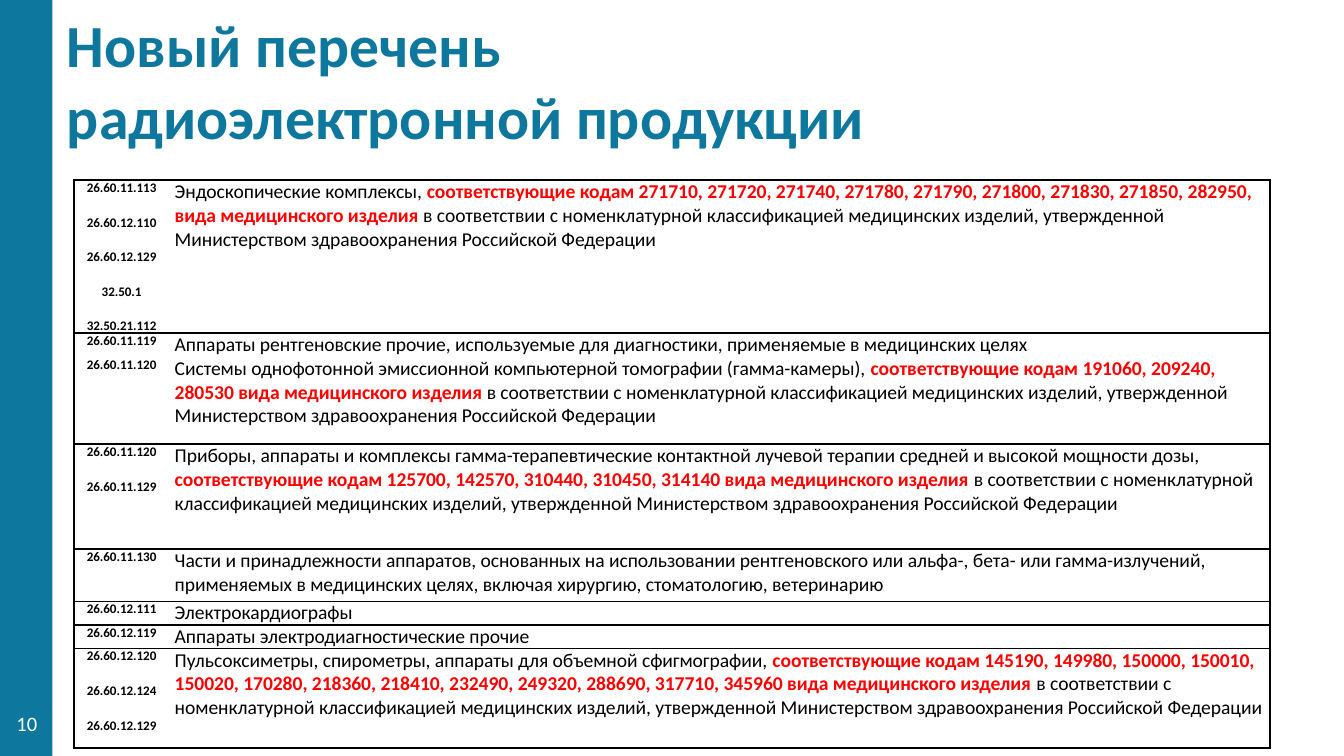
from lxml.etree import SubElement
from pptx import Presentation
from pptx.dml.color import RGBColor
from pptx.enum.shapes import MSO_SHAPE
from pptx.enum.text import MSO_ANCHOR, PP_ALIGN
from pptx.oxml import parse_xml
from pptx.oxml.ns import nsdecls, qn
from pptx.util import Inches, Pt

WIDE = 10
HIGH = WIDE * 9 / 16
TEAL = RGBColor(0x0E, 0x77, 0x9D)
WHITE = RGBColor(0xFF, 0xFF, 0xFF)
BLACK = RGBColor(0, 0, 0)
RED = RGBColor(0xFF, 0, 0)
FONT = "Calibri"
TITLE = "Новый перечень радиоэлектронной продукции"
KIND = " вида медицинского изделия "
ORDER = ("в соответствии с номенклатурной классификацией медицинских изделий, "
         "утвержденной Министерством здравоохранения Российской Федерации")
COLS = (0.71, 8.19)
ROWS = [
    (1.14, ["26.60.11.113", "26.60.12.110", "26.60.12.129", "32.50.1", "32.50.21.112"],
     "Эндоскопические комплексы, ",
     "271710, 271720, 271740, 271780, 271790, 271800, 271830, 271850, 282950,"),
    (0.17, ["26.60.11.119"],
     "Аппараты рентгеновские прочие, используемые для диагностики, "
     "применяемые в медицинских целях", ""),
    (0.65, ["26.60.11.120"],
     "Системы однофотонной эмиссионной компьютерной томографии (гамма-камеры), ",
     "191060, 209240, 280530"),
    (0.78, ["26.60.11.120", "26.60.11.129"],
     "Приборы, аппараты и комплексы гамма-терапевтические контактной лучевой "
     "терапии средней и высокой мощности дозы, ",
     "125700, 142570, 310440, 310450, 314140"),
    (0.39, ["26.60.11.130"],
     "Части и принадлежности аппаратов, основанных на использовании "
     "рентгеновского или альфа-, бета- или гамма-излучений, применяемых в "
     "медицинских целях, включая хирургию, стоматологию, ветеринарию", ""),
    (0.17, ["26.60.12.111"], "Электрокардиографы", ""),
    (0.17, ["26.60.12.119"], "Аппараты электродиагностические прочие", ""),
    (0.74, ["26.60.12.120", "26.60.12.124", "26.60.12.129"],
     "Пульсоксиметры, спирометры, аппараты для объемной сфигмографии, ",
     "145190, 149980, 150000, 150010, 150020, 170280, 218360, 218410, 232490, "
     "249320, 288690, 317710, 345960"),
]
JOINED = 1


def add_run(para, text, size, color, bold=False):
    run = para.add_run()
    run.text = text
    font = run.font
    font.name, font.size, font.bold = FONT, Pt(size), bold
    font.color.rgb = color


def add_text(slide, box, text, size, color, bold=False, align=PP_ALIGN.LEFT):
    frame = slide.shapes.add_textbox(*map(Inches, box)).text_frame
    frame.word_wrap = True
    frame.vertical_anchor = MSO_ANCHOR.MIDDLE
    para = frame.paragraphs[0]
    para.alignment = align
    add_run(para, text, size, color, bold)


def add_side(slide, box, number):
    left, top, width, height = box
    bar = slide.shapes.add_shape(MSO_SHAPE.RECTANGLE, *map(Inches, box))
    bar.shadow.inherit = False
    bar.fill.solid()
    bar.fill.fore_color.rgb = TEAL
    bar.line.fill.background()
    spot = (left, top + height - 0.39, width + 0.01, 0.3)
    add_text(slide, spot, number, 11, WHITE, align=PP_ALIGN.CENTER)


def set_edges(cell, shown):
    props = cell._tc.get_or_add_tcPr()
    for index, side in enumerate("LRTB"):
        line = parse_xml(f'<a:ln{side} w="{Pt(1)}" {nsdecls("a")}/>')
        if side in shown:
            fill = SubElement(line, qn("a:solidFill"))
            SubElement(fill, qn("a:srgbClr"), val=str(BLACK))
        else:
            SubElement(line, qn("a:noFill"))
        props.insert(index, line)


def fill_cell(cell, paras, size, align, edges):
    cell.margin_left = cell.margin_right = cell.margin_top = cell.margin_bottom = 0
    cell.fill.solid()
    cell.fill.fore_color.rgb = WHITE
    set_edges(cell, edges)
    frame = cell.text_frame
    for index, runs in enumerate(paras):
        para = frame.add_paragraph() if index else frame.paragraphs[0]
        para.alignment = align
        for side in ("marL", "marR"):
            para._p.get_or_add_pPr().set(side, str(Inches(0.04)))
        if index:
            para.space_before = Pt(10)
        for text, color, bold in runs:
            add_run(para, text, size, color, bold)


def add_list(slide, left, top):
    size = (sum(COLS), sum(row[0] for row in ROWS))
    table = slide.shapes.add_table(
        len(ROWS), len(COLS), *map(Inches, (left, top, *size))).table
    table.first_row = table.horz_banding = False
    for col, width in zip(table.columns, COLS):
        col.width = Inches(width)
    for index, (height, codes, name, kinds) in enumerate(ROWS):
        table.rows[index].height = Inches(height)
        edges = "TB"
        if index == JOINED:
            edges = "T"
        elif index == JOINED + 1:
            edges = "B"
        marks = [[(code, BLACK, True)] for code in codes]
        runs = [(name, BLACK, False)]
        if kinds:
            runs += [("соответствующие кодам " + kinds + KIND, RED, True),
                     (ORDER, BLACK, False)]
        fill_cell(table.cell(index, 0), marks, 7, PP_ALIGN.CENTER, edges + "L")
        fill_cell(table.cell(index, 1), [runs], 10.5, PP_ALIGN.LEFT, edges + "R")


def main():
    deck = Presentation()
    deck.slide_width, deck.slide_height = Inches(WIDE), Inches(HIGH)
    slide = deck.slides.add_slide(deck.slide_layouts[6])
    add_side(slide, (0, 0, 0.39, HIGH), "10")
    add_text(slide, (0.4, 0, 6.65, 1.18), TITLE, 32, TEAL, bold=True)
    add_list(slide, 0.55, 1.34)
    deck.save("out.pptx")


if __name__ == "__main__":
    main()
